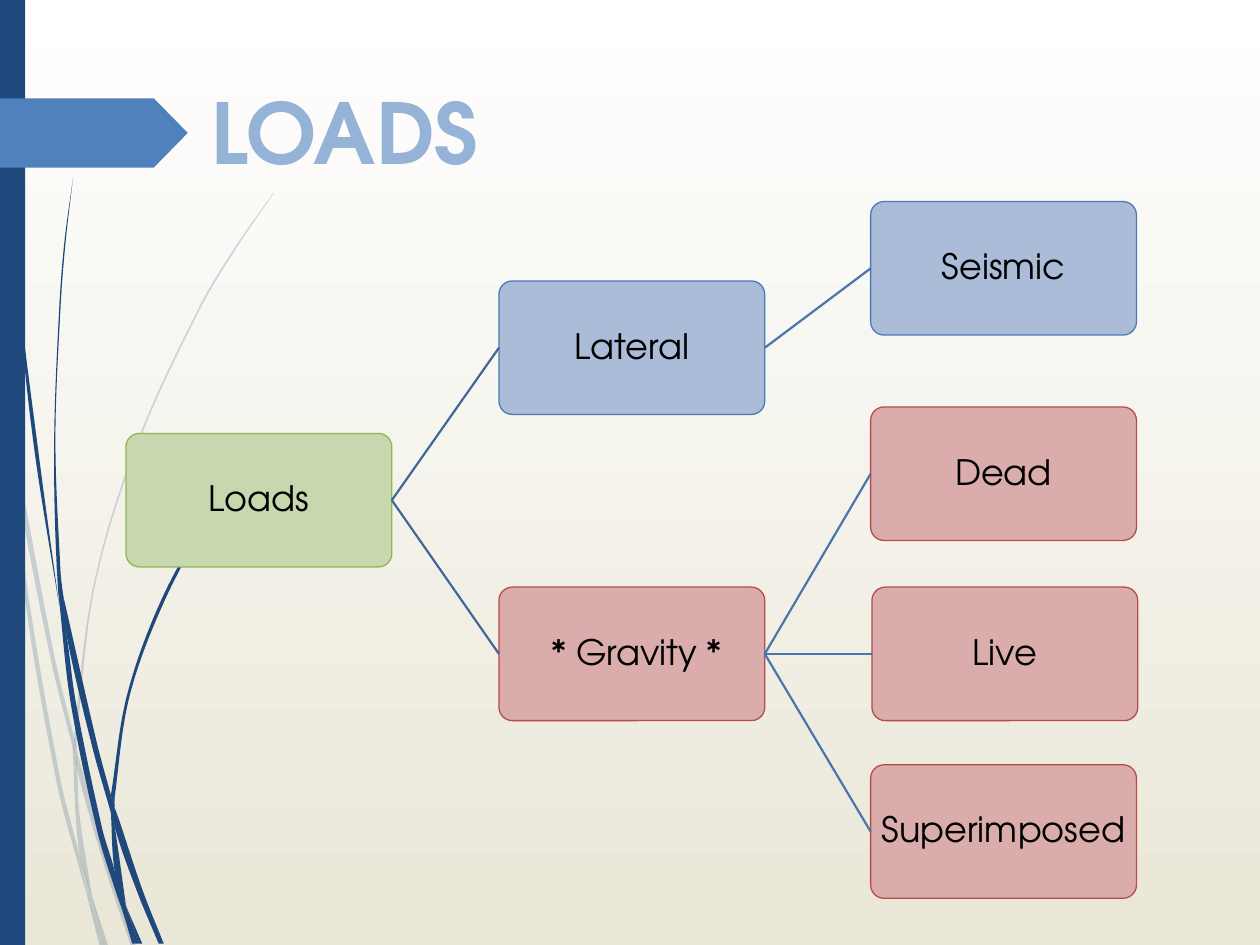
"""Build the load classification tree slide."""
from math import dist
from lxml.etree import SubElement
from pptx import Presentation
from pptx.dml.color import RGBColor
from pptx.enum.shapes import MSO_CONNECTOR, MSO_SHAPE
from pptx.enum.text import MSO_ANCHOR, PP_ALIGN
from pptx.oxml.ns import qn
from pptx.util import Inches, Pt

FONT = "TeX Gyre Adventor"
COLORS = {
    "top": "FFFFFF", "bottom": "EAE7D8", "navy": "1F497D", "tab": "4F81BD",
    "title": "95B3D7", "text": "000000", "trunk": "3F6797", "branch": "4875AC",
}
STYLES = {
    "green": ("C7D7AE", "94B355"),
    "blue": ("ABBCD8", "4B7BB5"),
    "red": ("DAACAB", "B74C4A"),
}
BOX_WIDTH, BOX_HEIGHT = 2.11, 1.06
NODES = [
    ("Loads", 1, 3.44, "green", None),
    ("Lateral", 3.96, 2.23, "blue", "Loads"),
    ("Seismic", 6.91, 1.6, "blue", "Lateral"),
    (" * Gravity *", 3.96, 4.66, "red", "Loads"),
    ("Dead", 6.91, 3.23, "red", " * Gravity *"),
    ("Live", 6.92, 4.66, "red", " * Gravity *"),
    ("Superimposed", 6.91, 6.07, "red", " * Gravity *"),
]
PALE_BLADES = [
    ([(0, 2.82), (.06, 3.22), (.08, 3.5)], [(0, 2.99), (.07, 3.44), (.08, 3.5)]),
    ([(.1, 3.45), (.43, 5.2), (.59, 5.86)],
     [(.1, 3.45), (.12, 3.76), (.4, 5.22), (.59, 5.99)]),
    ([(.61, 5.96), (.64, 6.07), (.88, 6.92), (1.08, 7.51)],
     [(.61, 5.96), (.61, 6.1), (.85, 6.94), (1.04, 7.51)]),
    ([(.73, 7.11), (.83, 7.51)], [(.73, 7.11), (.86, 7.51)]),
    ([(.08, 3.5), (.12, 3.76), (.22, 4.69), (.48, 6.19), (.64, 6.83), (.7, 7.14)],
     [(.08, 3.5), (.19, 4.7), (.45, 6.21), (.64, 6.93), (.7, 7.14)]),
    ([(.58, 5.99), (.6, 6.46), (.64, 6.83), (.73, 7.11)],
     [(.58, 5.99), (.61, 6.1), (.63, 6.46), (.73, 7.11)]),
    ([(2.17, 1.53), (1.86, 1.97), (1.58, 2.44), (1.1, 3.48), (.75, 4.61),
      (.59, 5.84), (.61, 5.96)],
     [(2.17, 1.54), (1.87, 1.98), (1.59, 2.45), (1.11, 3.49), (.76, 4.62),
      (.61, 5.84), (.61, 5.96)]),
    ([(.7, 7.14), (.79, 7.51)], [(.7, 7.14), (.82, 7.51)]),
    ([(.59, 5.86), (.58, 5.99), (.61, 6.08)], [(.59, 5.86), (.61, 5.96), (.61, 6.1)]),
    ([(.65, 6.83), (.69, 7.07), (.7, 7.14), (.82, 7.51)],
     [(.65, 6.83), (.67, 6.92), (.73, 7.11), (.83, 7.51)]),
]
NAVY_BLADES = [
    ([(.02, 0), (.03, .48), (.05, 1.1), (.14, 2.33), (.27, 3.55), (.47, 4.81)],
     [(.03, 0), (.04, .48), (.06, 1.09), (.15, 2.32), (.3, 3.55), (.47, 4.81)]),
    ([(.5, 4.72), (.53, 5.05), (.73, 5.92), (.88, 6.45)],
     [(.5, 4.72), (.77, 5.9), (.88, 6.31)]),
    ([(.91, 6.41), (.91, 6.56), (1.09, 7.08), (1.26, 7.49)],
     [(.91, 6.41), (.94, 6.49), (1.13, 7.06), (1.3, 7.49)]),
    ([(.47, 4.77), (.56, 5.57), (.77, 6.59), (.92, 7.08), (.97, 7.22)],
     [(.47, 4.77), (.53, 5.05), (.6, 5.56), (.81, 6.57), (.91, 6.91), (.97, 7.22)]),
    ([(.58, 1.41), (.51, 1.93), (.47, 2.45), (.43, 3.49), (.45, 4.49), (.49, 4.72)],
     [(.58, 1.41), (.52, 1.93), (.48, 2.45), (.44, 3.49), (.48, 4.53), (.5, 4.72)]),
    ([(1, 7.19), (1.1, 7.49)], [(1, 7.19), (1.13, 7.49)]),
    ([(.45, 4.49), (.47, 4.77), (.53, 5.05)], [(.45, 4.49), (.5, 4.72), (.53, 5.05)]),
    ([(2.15, 3.44), (1.91, 3.73), (1.68, 4.05), (1.29, 4.74), (1.01, 5.51), (.88, 6.31)],
     [(2.16, 3.44), (1.91, 3.74), (1.69, 4.06), (1.31, 4.76), (1.03, 5.52),
      (.91, 6.33), (.91, 6.41)]),
    ([(.97, 7.22), (1.05, 7.49)], [(.97, 7.22), (1.08, 7.49)]),
    ([(.88, 6.45), (.91, 6.91), (1, 7.19)], [(.88, 6.45), (.91, 6.56), (1, 7.19)]),
    ([(.88, 6.31), (.88, 6.45), (.91, 6.56)], [(.88, 6.31), (.91, 6.41), (.91, 6.56)]),
    ([(.91, 6.91), (.97, 7.22), (1.08, 7.49)], [(.91, 6.91), (1, 7.19), (1.1, 7.49)]),
]


def color(name):
    return RGBColor.from_string(COLORS.get(name, name))


def paint(shape, fill):
    shape.shadow.inherit = False
    shape.fill.solid()
    shape.fill.fore_color.rgb = color(fill)
    shape.line.fill.background()


def curve_points(knots):
    """Return two control points and an end point for each span."""
    padded = [knots[0], *knots, knots[-1]]
    points = []
    for a, b, c, d in zip(padded, padded[1:], padded[2:], padded[3:]):
        reach = dist(b, c) / 3
        out, back = reach / (dist(a, c) or 1), reach / (dist(b, d) or 1)
        points += [tuple(q + (r - p) * out for p, q, r in zip(a, b, c)),
                   tuple(r - (s - q) * back for q, r, s in zip(b, c, d)), c]
    return points


def add_blade(page, left, right, opacity):
    back = right[::-1]
    points = curve_points(left) + [left[-1]] * 2 + [back[0]] + curve_points(back)
    builder = page.shapes.build_freeform(*map(Inches, left[0]))
    builder.add_line_segments([tuple(map(Inches, point)) for point in points])
    blade = builder.convert_to_shape()
    paint(blade, "navy")
    lines = list(blade._element.iter(qn("a:lnTo")))
    for first, second, third in zip(lines[::3], lines[1::3], lines[2::3]):
        first.tag = qn("a:cubicBezTo")
        for line in (second, third):
            first.append(line[0])
            line.getparent().remove(line)
    if opacity < 100:
        tint = next(blade._element.iter(qn("a:srgbClr")))
        SubElement(tint, qn("a:alpha"), val=str(opacity * 1000))


def add_block(page, kind, left, top, width, height, fill):
    block = page.shapes.add_shape(
        kind, Inches(left), Inches(top), Inches(width), Inches(height))
    paint(block, fill)
    return block


def write(frame, text, size, ink):
    frame.word_wrap = True
    para = frame.paragraphs[0]
    para.text = text
    para.font.name = FONT
    para.font.size = Pt(size)
    para.font.color.rgb = color(ink)
    return para


def add_node(page, text, left, top, style):
    fill, edge = STYLES[style]
    box = add_block(page, MSO_SHAPE.ROUNDED_RECTANGLE, left, top,
                    BOX_WIDTH, BOX_HEIGHT, fill)
    box.adjustments[0] = 0.1
    box.line.color.rgb = color(edge)
    box.line.width = Pt(0.75)
    frame = box.text_frame
    frame.margin_left = frame.margin_right = Inches(0.04)
    frame.margin_top = frame.margin_bottom = Inches(0.04)
    frame.vertical_anchor = MSO_ANCHOR.MIDDLE
    para = write(frame, text, 20, "text")
    para.alignment = PP_ALIGN.CENTER
    para.line_spacing = 0.9
    return box


def join(page, parent, child, ink):
    link = page.shapes.add_connector(MSO_CONNECTOR.STRAIGHT, 0, 0, 0, 0)
    link.begin_connect(parent, 3)
    link.end_connect(child, 1)
    link.line.color.rgb = color(ink)
    link.line.width = Pt(1.25)
    SubElement(link._element.spPr, qn("a:effectLst"))


deck = Presentation()
deck.slide_width, deck.slide_height = Inches(10), Inches(7.5)
page = deck.slides.add_slide(deck.slide_layouts[6])
backdrop = page.background.fill
backdrop.gradient()
backdrop.gradient_angle = 270
for stop, name in zip(backdrop.gradient_stops, ("top", "bottom")):
    stop.color.rgb = color(name)
for blades, opacity in ((PALE_BLADES, 20), (NAVY_BLADES, 100)):
    for left, right in blades:
        add_blade(page, left, right, opacity)
add_block(page, MSO_SHAPE.RECTANGLE, 0, 0, 0.2, 7.5, "navy")
tab = add_block(page, MSO_SHAPE.PENTAGON, 0, 0.78, 1.49, 0.55, "tab")
tab.adjustments[0] = 0.49
boxes = {}
for text, left, top, style, parent in NODES:
    boxes[text] = add_node(page, text, left, top, style)
    if parent:
        ink = "trunk" if parent == "Loads" else "branch"
        join(page, boxes[parent], boxes[text], ink)
title = page.shapes.add_textbox(Inches(1.58), Inches(0.59), Inches(4), Inches(0.91))
write(title.text_frame, "LOADS", 48, "title").font.bold = True
deck.save("out.pptx")
